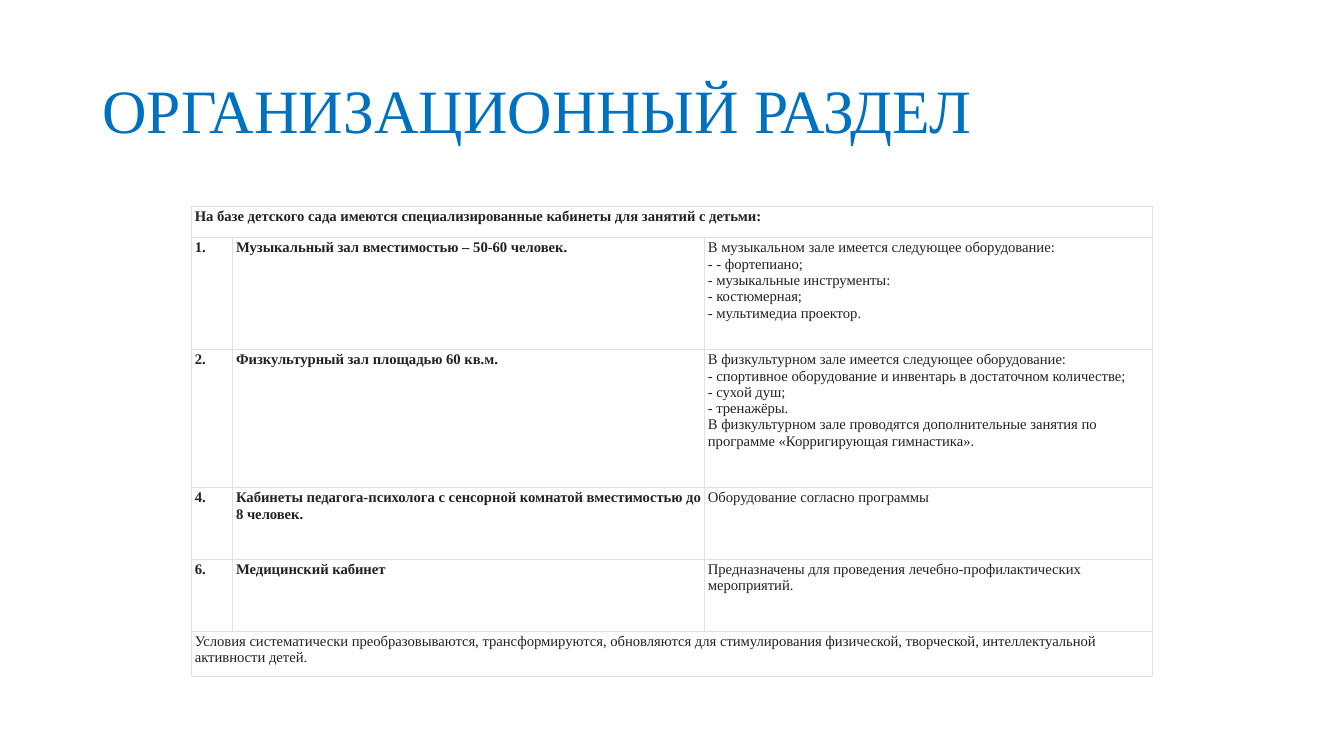
from dataclasses import dataclass

from lxml import etree
from pptx import Presentation
from pptx.dml.color import RGBColor
from pptx.enum.text import MSO_ANCHOR
from pptx.oxml.ns import qn
from pptx.util import Cm, Pt

MIDDLE = MSO_ANCHOR.MIDDLE
TOP = MSO_ANCHOR.TOP

FONT = "Times New Roman"
BLUE = "0070C0"
INK = "222222"
RULE = "DEE2E6"
RULE_WIDTH = Pt(0.75)
BORDER_TAGS = ("a:lnL", "a:lnR", "a:lnT", "a:lnB")
CELL_FORMAT = {
    "margin_left": Cm(0.08),
    "margin_right": Cm(0.08),
    "margin_top": Cm(0.05),
    "margin_bottom": Cm(0.05),
    "vertical_anchor": TOP,
}
COLUMN_WIDTHS = (1.04, 11.89, 11.28)


@dataclass
class Room:
    number: str
    name: str
    equipment: list[str]
    height: float


HEADING = "На базе детского сада имеются специализированные кабинеты для занятий с детьми:"
HEADING_HEIGHT = 0.79
CONCLUSION = (
    "Условия систематически преобразовываются, трансформируются, обновляются "
    "для стимулирования физической, творческой, интеллектуальной активности детей."
)
CONCLUSION_HEIGHT = 1.14
ROOMS = [
    Room("1.", "Музыкальный зал вместимостью – 50-60 человек.", [
        "В музыкальном зале имеется следующее оборудование:",
        "- - фортепиано;",
        "- музыкальные инструменты:",
        "- костюмерная;",
        "- мультимедиа проектор.",
    ], 2.82),
    Room("2.", "Физкультурный зал площадью 60 кв.м.", [
        "В физкультурном зале имеется следующее оборудование:",
        "- спортивное оборудование и инвентарь в достаточном количестве;",
        "- сухой душ;",
        "- тренажёры.",
        "В физкультурном зале проводятся дополнительные занятия по программе "
        "«Корригирующая гимнастика».",
    ], 3.48),
    Room("4.", "Кабинеты педагога-психолога с сенсорной комнатой вместимостью до 8 человек.",
         ["Оборудование согласно программы"], 1.81),
    Room("6.", "Медицинский кабинет",
         ["Предназначены для проведения лечебно-профилактических мероприятий."], 1.81),
]


def rgb(value: str) -> RGBColor:
    return RGBColor.from_string(value)


def write(frame, lines: list[str], size: float, color: str, bold: bool = False) -> None:
    for index, line in enumerate(lines):
        paragraph = frame.add_paragraph() if index else frame.paragraphs[0]
        run = paragraph.add_run()
        run.text = line
        font_format = {"name": FONT, "size": Pt(size), "bold": bold}
        for attribute, value in font_format.items():
            setattr(run.font, attribute, value)
        run.font.color.rgb = rgb(color)


def style_cell(cell) -> None:
    for attribute, value in CELL_FORMAT.items():
        setattr(cell, attribute, value)
    properties = cell._tc.get_or_add_tcPr()
    for tag in BORDER_TAGS:
        border = etree.SubElement(properties, qn(tag), w=str(RULE_WIDTH))
        fill = etree.SubElement(border, qn("a:solidFill"))
        etree.SubElement(fill, qn("a:srgbClr"), val=RULE)
    cell.fill.background()


def add_title(slide) -> None:
    frame = slide.shapes.add_textbox(Cm(2.33), Cm(1.01), Cm(29.21), Cm(3.68)).text_frame
    frame.word_wrap = True
    frame.vertical_anchor = MIDDLE
    write(frame, ["ОРГАНИЗАЦИОННЫЙ РАЗДЕЛ"], 44, BLUE)
    frame.paragraphs[0].line_spacing = 0.9


def add_rooms_table(slide) -> None:
    heights = [HEADING_HEIGHT, *(room.height for room in ROOMS), CONCLUSION_HEIGHT]
    rooms_table = slide.shapes.add_table(
        len(heights), len(COLUMN_WIDTHS),
        Cm(4.83), Cm(5.2), Cm(sum(COLUMN_WIDTHS)), Cm(sum(heights)),
    ).table
    rooms_table.first_row = False
    rooms_table.horz_banding = False
    for column, width in zip(rooms_table.columns, COLUMN_WIDTHS):
        column.width = Cm(width)
    for row, height in zip(rooms_table.rows, heights):
        row.height = Cm(height)
    for cell in rooms_table.iter_cells():
        style_cell(cell)

    last_row, last_column = len(heights) - 1, len(COLUMN_WIDTHS) - 1
    for row, text, bold in ((0, HEADING, True), (last_row, CONCLUSION, False)):
        banner = rooms_table.cell(row, 0)
        banner.merge(rooms_table.cell(row, last_column))
        write(banner.text_frame, [text], 10.5, INK, bold)
    for row, room in enumerate(ROOMS, start=1):
        contents = (([room.number], True), ([room.name], True), (room.equipment, False))
        for column, (lines, bold) in enumerate(contents):
            write(rooms_table.cell(row, column).text_frame, lines, 10.5, INK, bold)


def main() -> None:
    presentation = Presentation()
    presentation.slide_width = Cm(33.87)
    presentation.slide_height = Cm(19.05)
    slide = presentation.slides.add_slide(presentation.slide_layouts[6])
    add_title(slide)
    add_rooms_table(slide)
    presentation.save("out.pptx")


if __name__ == "__main__":
    main()
